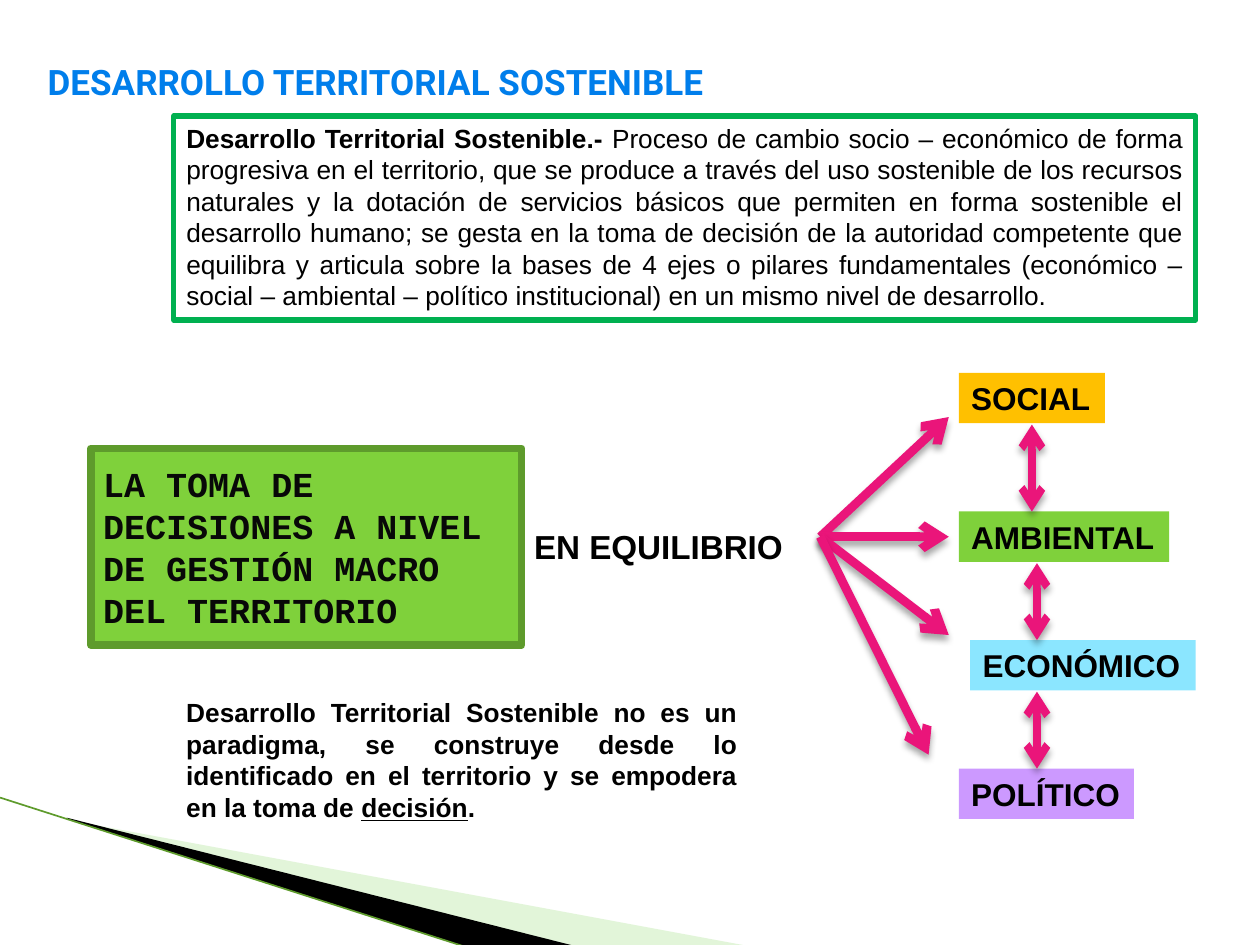
import pptx
import pptx.util
import pptx.oxml
import pptx.oxml.ns
import pptx.dml.color
import pptx.enum.shapes
import pptx.enum.text
from dataclasses import dataclass
from lxml import etree

Inches, Pt = pptx.util.Inches, pptx.util.Pt
qn = pptx.oxml.ns.qn
Align, Anchor = pptx.enum.text.PP_ALIGN, pptx.enum.text.MSO_ANCHOR
AutoSize = pptx.enum.text.MSO_AUTO_SIZE


@dataclass(frozen=True)
class Theme:
    black: str = "000000"
    ink: str = "080808"
    blue: str = "007EEB"
    green: str = "7FD13B"
    dark_green: str = "5E9B2C"
    pale_green: str = "B8E7A1"
    frame_green: str = "00B050"
    pink: str = "EA157A"
    amber: str = "FFC000"
    sky: str = "8BE6FF"
    violet: str = "CC99FF"
    sans: str = "Arial"
    heading: str = "Roboto"
    mono: str = "Courier New"
    title_size: int = 20
    link_size: int = 19
    label_size: int = 18
    body_size: int = 15


THEME = Theme()


def rgb(value):
    return pptx.dml.color.RGBColor.from_string(value)


def add_box(slide, box, runs, size, font=THEME.sans, color=THEME.black, fill=None,
            line=None, width=0, **frame_format):
    """Rectangle with one paragraph; runs are (text, font attributes) pairs."""
    shape = slide.shapes.add_shape(pptx.enum.shapes.MSO_SHAPE.RECTANGLE,
                                   *(Inches(value) for value in box))
    shape.shadow.inherit = False
    if fill:
        shape.fill.solid()
        shape.fill.fore_color.rgb = rgb(fill)
    else:
        shape.fill.background()
    if line:
        shape.line.color.rgb = rgb(line)
        shape.line.width = Pt(width)
    else:
        shape.line.fill.background()
    frame = shape.text_frame
    formats = {"word_wrap": True, "vertical_anchor": Anchor.TOP,
               "auto_size": AutoSize.NONE} | frame_format
    alignment = formats.pop("alignment", Align.LEFT)
    for name, value in formats.items():
        setattr(frame, name, value)
    paragraph = frame.paragraphs[0]
    paragraph.alignment = alignment
    for text, attributes in runs:
        run = paragraph.add_run()
        run.text = text
        run.font.color.rgb = rgb(color)
        for name, value in ({"name": font, "size": Pt(size), "bold": True} | attributes).items():
            setattr(run.font, name, value)


def add_line(slide, start, end, color, width):
    line = slide.shapes.add_connector(pptx.enum.shapes.MSO_CONNECTOR.STRAIGHT,
                                      *(Inches(value) for value in (*start, *end)))
    line.line.color.rgb = rgb(color)
    line.line.width = Pt(width)
    effects = etree.SubElement(line._element.spPr, qn("a:effectLst"))
    return line, effects


def add_arrow(slide, start, end, width, ends=("tailEnd",)):
    """Pink arrow with a soft shadow below it."""
    arrow, effects = add_line(slide, start, end, THEME.pink, width)
    for name in ends:
        etree.SubElement(arrow.line._get_or_add_ln(), qn(f"a:{name}"), type="arrow")
    shadow = etree.SubElement(effects, qn("a:outerShdw"), blurRad=str(Pt(4)),
                              dist=str(Pt(3)), dir="5400000", rotWithShape="0")
    shade = etree.SubElement(shadow, qn("a:srgbClr"), val=THEME.black)
    etree.SubElement(shade, qn("a:alpha"), val="35000")


def add_wedge(slide, box, points, color, alpha=None):
    left, top = box[:2]
    first, *others = [(Inches(left + x), Inches(top + y)) for x, y in points]
    builder = slide.shapes.build_freeform(*first, scale=1.0)
    builder.add_line_segments(others, close=True)
    wedge = builder.convert_to_shape()
    wedge.shadow.inherit = False
    wedge.fill.solid()
    wedge.fill.fore_color.rgb = rgb(color)
    wedge.line.fill.background()
    if alpha:
        fill_color = wedge._element.spPr.find(qn("a:solidFill"))[0]
        etree.SubElement(fill_color, qn("a:alpha"), val=str(alpha * 1000))


def add_corner(slide, box):
    """Swoosh in the lower left corner."""
    left, top, width, height = box
    add_wedge(slide, box, [(0.55, 0.18), (5.95, 1.18), (4.56, 1.18), (0.55, 0.17)],
              THEME.pale_green, 40)
    add_wedge(slide, box, [(0.53, 0.16), (4.57, 1.18), (3.72, 1.19), (0.54, 0.17)],
              THEME.black)
    add_line(slide, (left, top), (left + 3.71, top + height), THEME.dark_green, 0.95)


def add_definition(slide, box):
    add_box(slide, box, [
        ("Desarrollo Territorial Sostenible.-", {}),
        (" Proceso de cambio socio – económico de forma progresiva en el territorio, "
         "que se produce a través del uso sostenible de los recursos naturales y la "
         "dotación de servicios básicos que permiten en forma sostenible el desarrollo "
         "humano; se gesta en la toma de decisión de la autoridad competente que equilibra "
         "y articula sobre la bases de 4 ejes o pilares fundamentales (económico – social "
         "– ambiental – político institucional) en un mismo nivel de desarrollo.",
         {"bold": False}),
    ], THEME.body_size, line=THEME.frame_green, width=3, alignment=Align.JUSTIFY)


def add_decision(slide, box):
    add_box(slide, box,
            [("LA TOMA DE DECISIONES A NIVEL DE GESTIÓN MACRO DEL TERRITORIO", {})],
            THEME.title_size, THEME.mono, THEME.ink, THEME.green, THEME.dark_green, 4.33,
            vertical_anchor=Anchor.MIDDLE)


def add_conclusion(slide, box):
    add_box(slide, box, [
        ("Desarrollo Territorial Sostenible no es un paradigma, se construye desde lo "
         "identificado en el territorio y se empodera en la toma de ", {}),
        ("decisión", {"underline": True}),
        (".", {}),
    ], THEME.body_size, alignment=Align.JUSTIFY)


def add_fan(slide, box):
    """Arrows from one point to the four pillars."""
    left, top, width, height = box
    origin = (left, top + 0.95)
    for x, y in [(width, 0), (width, 0.95), (width, 1.73), (0.86, height)]:
        add_arrow(slide, origin, (left + x, top + y), 5)


def add_pillars(slide, box):
    """Column of pillar labels joined by double arrows."""
    left, top, width, height = box
    label_height = 0.4
    pillars = [("SOCIAL", 0, 0, 1.16, THEME.amber),
               ("AMBIENTAL", 0, 1.1, 1.67, THEME.green),
               ("ECONÓMICO", 0.09, 2.12, 1.79, THEME.sky),
               ("POLÍTICO", 0, 3.14, 1.39, THEME.violet)]
    for text, x, y, label_width, color in pillars:
        add_box(slide, (left + x, top + y, label_width, label_height), [(text, {})],
                THEME.label_size, fill=color, word_wrap=False)
    for x, upper, lower in zip((0.58, 0.62, 0.62), pillars, pillars[1:]):
        add_arrow(slide, (left + x, top + upper[2] + label_height + 0.01),
                  (left + x, top + lower[2]), 4.33, ("headEnd", "tailEnd"))


def main():
    presentation = pptx.Presentation()
    presentation.slide_width, presentation.slide_height = Inches(10), Inches(7.5)
    slide = presentation.slides.add_slide(presentation.slide_layouts[6])

    add_corner(slide, (0, 6.33, 5.95, 1.19))
    add_box(slide, (0.28, 0.43, 6.06, 0.44), [("DESARROLLO TERRITORIAL SOSTENIBLE", {})],
            THEME.title_size, THEME.heading, THEME.blue)
    add_conclusion(slide, (1.38, 5.48, 4.57, 1.11))
    add_decision(slide, (0.72, 3.56, 3.42, 1.56))
    add_fan(slide, (6.51, 3.31, 1.02, 2.68))
    add_pillars(slide, (7.61, 2.96, 1.88, 3.54))
    add_box(slide, (4.14, 4.13, 2.2, 0.42), [("EN EQUILIBRIO", {})], THEME.link_size,
            word_wrap=False)
    add_definition(slide, (1.38, 0.92, 8.11, 1.62))

    presentation.save("out.pptx")


if __name__ == "__main__":
    main()
